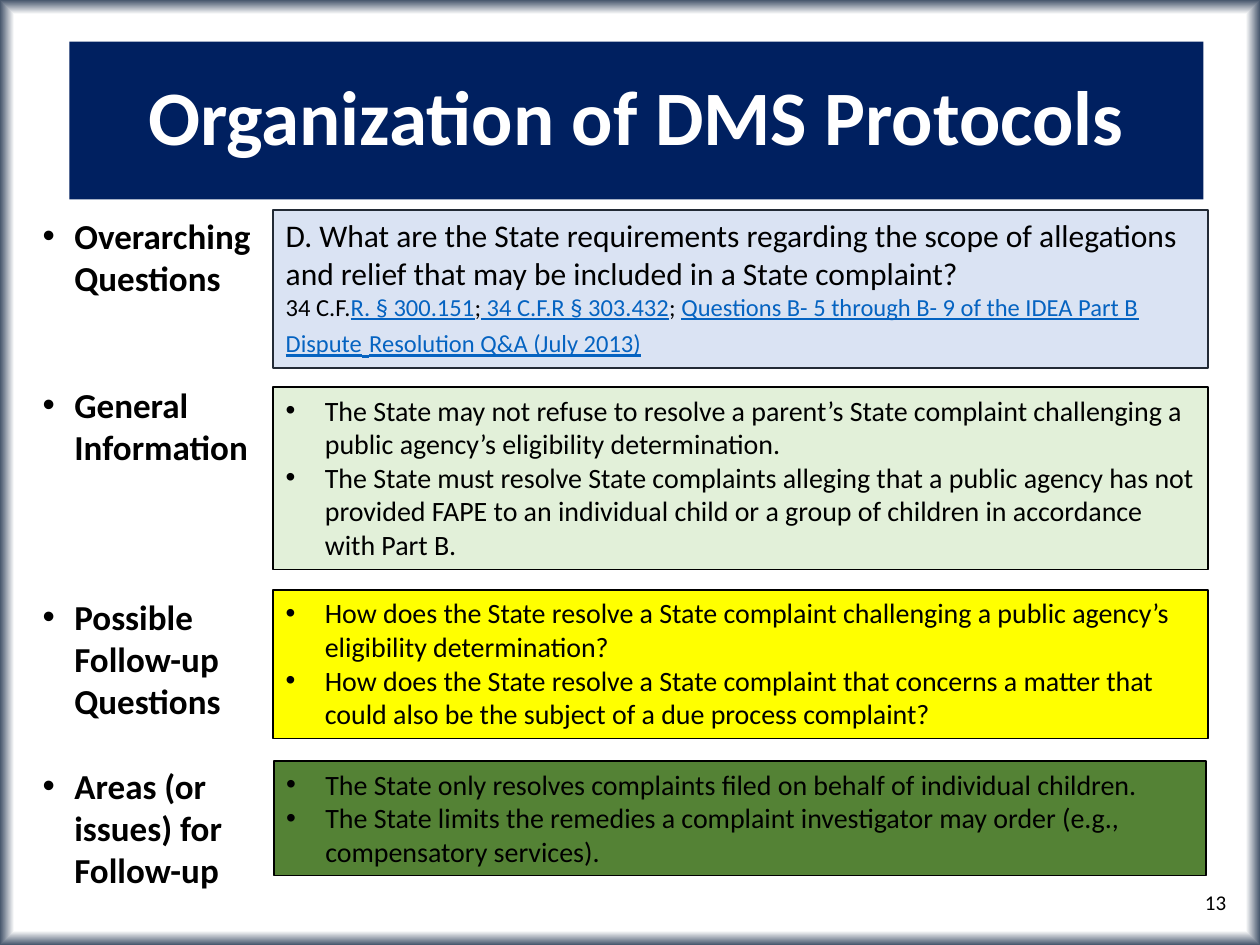
from pptx import Presentation
from pptx.dml.color import RGBColor
from pptx.enum.shapes import MSO_SHAPE as Preset
from pptx.enum.text import MSO_ANCHOR as Anchor, MSO_AUTO_SIZE as AutoSize, PP_ALIGN as Align
from pptx.oxml import parse_xml
from pptx.oxml.ns import nsdecls
from pptx.util import Cm, Pt
from lxml.etree import SubElement
from pptx.oxml.ns import qn

FONT = "Calibri"
COLORS = {
    "white": "FFFFFF", "black": "000000", "edge": "44546A", "navy": "002060",
    "slate": "222A35", "blue": "DAE3F3", "mint": "E2F0D9", "yellow": "FFFF00",
    "green": "548235", "link": "0563C1",
}
LABELS = [
    ("Overarching Questions", 0),
    ("General Information", 2),
    ("Possible Follow-up Questions", 3),
    ("Areas (or issues) for Follow-up", 1),
]
LABEL_LINE = 24.4
CITATIONS = [
    ("34 C.F.", False), ("R. § 300.151", True), (";", False),
    (" 34 C.F.R § 303.432", True), ("; ", False),
    ("Questions B- 5 through B- 9 of the IDEA Part B Dispute", True),
    (" ", True), ("Resolution Q&A (July 2013)", True),
]
PANELS = [
    ((5.51, 7.8, 18.85, 3.68), "mint", [
        "The State may not refuse to resolve a parent’s State complaint challenging a public agency’s eligibility determination.",
        "The State must resolve State complaints alleging that a public agency has not provided FAPE to an individual child or a group of children in accordance with Part B.",
    ]),
    ((5.51, 11.89, 18.85, 3), "yellow", [
        "How does the State resolve a State complaint challenging a public agency’s eligibility determination?",
        "How does the State resolve a State complaint that concerns a matter that could also be the subject of a due process complaint?",
    ]),
    ((5.52, 15.34, 18.8, 2.31), "green", [
        "The State only resolves complaints filed on behalf of individual children.",
        "The State limits the remedies a complaint investigator may order (e.g., compensatory services).",
    ]),
]


def rgb(name):
    return RGBColor.from_string(COLORS[name])


def style(font, size, color="black", bold=False):
    font.name = FONT
    font.size = Pt(size)
    font.bold = bold
    font.color.rgb = rgb(color)


def add_bullet(para, indent):
    props = para._p.get_or_add_pPr()
    props.set("marL", str(Cm(indent)))
    props.set("indent", str(-Cm(indent)))
    SubElement(props, qn("a:buFont")).set("typeface", "Arial")
    SubElement(props, qn("a:buChar")).set("char", "•")


def write_lines(frame, texts, size, indent, bold=False):
    frame.text = "\n".join(texts)
    for para in frame.paragraphs:
        para.alignment = Align.LEFT
        add_bullet(para, indent)
        for span in para.runs:
            style(span.font, size, bold=bold)


def paint_background(page):
    page.element.cSld.insert(0, parse_xml(
        f'<p:bg {nsdecls("p", "a")}><p:bgPr><a:gradFill><a:gsLst>'
        f'<a:gs pos="97000"><a:srgbClr val="{COLORS["white"]}"/></a:gs>'
        f'<a:gs pos="100000"><a:srgbClr val="{COLORS["edge"]}"/></a:gs></a:gsLst>'
        '<a:path path="shape"><a:fillToRect l="50000" t="50000" r="50000" b="50000"/></a:path>'
        '</a:gradFill><a:effectLst/></p:bgPr></p:bg>'))


def add_panel(page, area, fill, line=None):
    box = page.shapes.add_shape(Preset.RECTANGLE, *map(Cm, area))
    box.shadow.inherit = False
    box.fill.solid()
    box.fill.fore_color.rgb = rgb(fill)
    if line:
        box.line.color.rgb = rgb(line)
        box.line.width = Pt(1)
    else:
        box.line.fill.background()
    box.text_frame.word_wrap = True
    box.text_frame.vertical_anchor = Anchor.TOP
    return box


def add_title(page, area):
    frame = add_panel(page, area, "navy").text_frame
    frame.vertical_anchor = Anchor.MIDDLE
    frame.text = "Organization of DMS Protocols"
    para = frame.paragraphs[0]
    para.alignment = Align.CENTER
    para.line_spacing = 0.9
    style(para.runs[0].font, 44, "white", True)


def add_labels(page, area):
    frame = page.shapes.add_textbox(*map(Cm, area)).text_frame
    frame.word_wrap = True
    write_lines(frame, [text for text, _ in LABELS], 20, 0.64, True)
    for para, (_, gap) in zip(frame.paragraphs, LABELS):
        if gap:
            para.space_before = Pt(gap * LABEL_LINE)


def add_question(page, area):
    frame = add_panel(page, area, "blue", "slate").text_frame
    frame.auto_size = AutoSize.SHAPE_TO_FIT_TEXT
    frame.text = ("D. What are the State requirements regarding the scope of allegations "
                  "and relief that may be included in a State complaint?")
    style(frame.paragraphs[0].runs[0].font, 18)
    citation = frame.add_paragraph()
    for text, linked in CITATIONS:
        span = citation.add_run()
        span.text = text
        spacer = text == " "
        style(span.font, 18 if spacer else 14, "link" if linked else "black", spacer)
        span.font.underline = linked
    for para in frame.paragraphs:
        para.alignment = Align.LEFT


def add_points(page, area, fill, points):
    frame = add_panel(page, area, fill, "black").text_frame
    frame.auto_size = AutoSize.SHAPE_TO_FIT_TEXT
    write_lines(frame, points, 16, 0.79)


def add_page_number(page, area):
    frame = page.shapes.add_textbox(*map(Cm, area)).text_frame
    frame.word_wrap = True
    frame.vertical_anchor = Anchor.MIDDLE
    frame.text = "13"
    para = frame.paragraphs[0]
    para.alignment = Align.RIGHT
    style(para.runs[0].font, 12)


def main():
    deck = Presentation()
    deck.slide_width, deck.slide_height = Cm(25.4), Cm(19.05)
    page = deck.slides.add_slide(deck.slide_layouts[6])
    paint_background(page)
    add_title(page, (1.4, 0.84, 22.86, 3.18))
    add_labels(page, (0.61, 4.19, 5.66, 13.94))
    add_question(page, (5.51, 4.24, 18.85, 3.18))
    for area, fill, points in PANELS:
        add_points(page, area, fill, points)
    add_page_number(page, (19.25, 17.68, 5.72, 1.02))
    deck.save("out.pptx")


if __name__ == "__main__":
    main()
